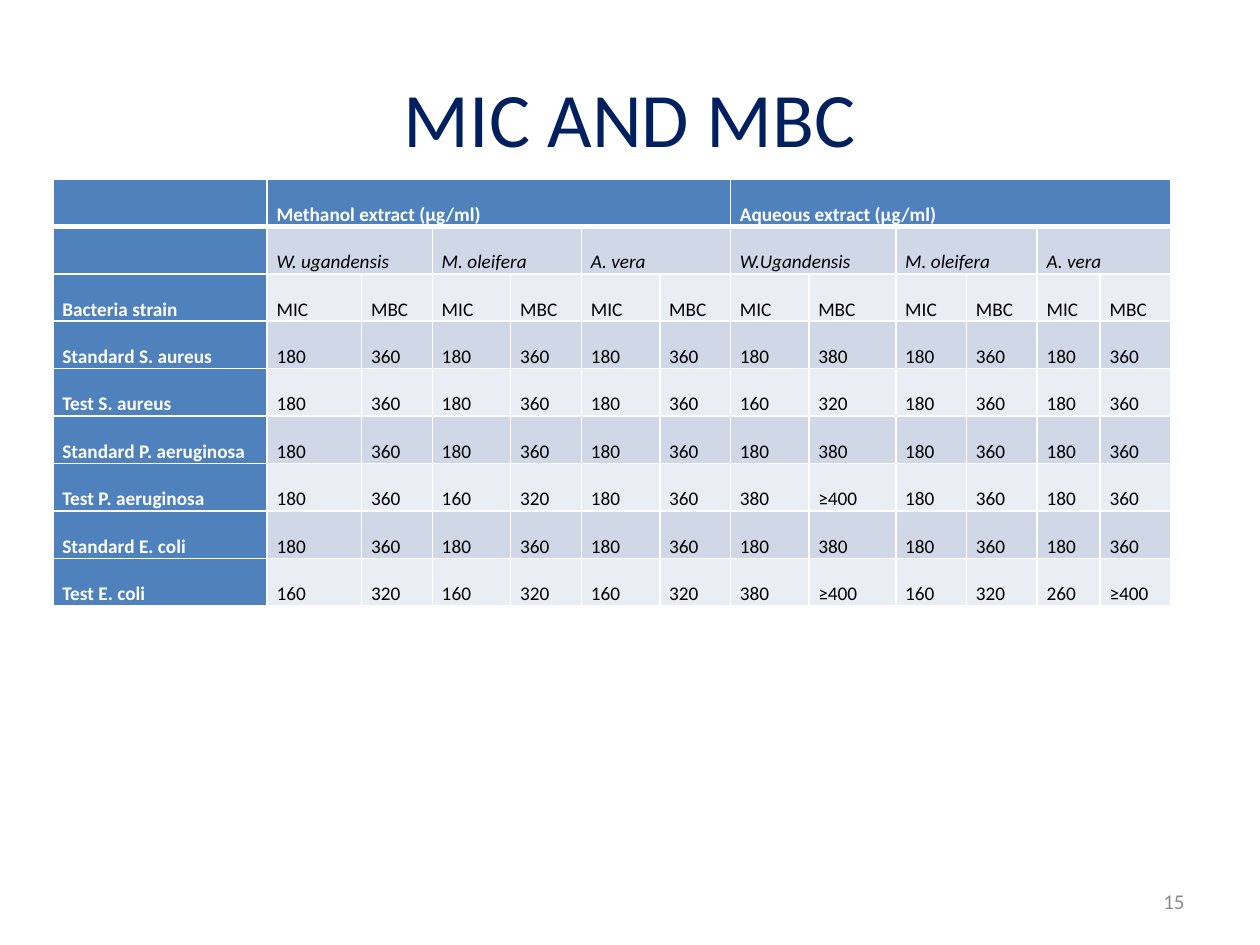
from typing import NamedTuple

from lxml.etree import SubElement
from pptx import Presentation
from pptx.dml.color import RGBColor
from pptx.enum.text import MSO_ANCHOR, PP_ALIGN
from pptx.oxml.ns import qn
from pptx.util import Pt

NAVY = RGBColor(0x00, 0x20, 0x60)
BLUE = RGBColor(0x4F, 0x81, 0xBD)
BAND_DARK = RGBColor(0xD0, 0xD8, 0xE8)
BAND_LIGHT = RGBColor(0xE9, 0xED, 0xF4)
WHITE = RGBColor(0xFF, 0xFF, 0xFF)
BLACK = RGBColor(0x00, 0x00, 0x00)
GRAY = RGBColor(0x8C, 0x8C, 0x8C)

COL_WIDTHS = (122.4, 54, 40.4, 44.8, 40.4, 44.8, 40.4,
              44.8, 49.7, 40.4, 40.4, 36, 40.4)
ROW_HEIGHT = 27.1


class Strain(NamedTuple):
    name: str
    values: str  # MIC and MBC for each plant, methanol first


EXTRACTS = ("Methanol extract (μg/ml)", "Aqueous extract (μg/ml)")
PLANTS = ("W. ugandensis", "M. oleifera", "A. vera",
          "W.Ugandensis", "M. oleifera", "A. vera")
STRAINS = (
    Strain("Standard S. aureus", "180 360 180 360 180 360 180 380 180 360 180 360"),
    Strain("Test S. aureus", "180 360 180 360 180 360 160 320 180 360 180 360"),
    Strain("Standard P. aeruginosa", "180 360 180 360 180 360 180 380 180 360 180 360"),
    Strain("Test P. aeruginosa", "180 360 160 320 180 360 380 ≥400 180 360 180 360"),
    Strain("Standard E. coli", "180 360 180 360 180 360 180 380 180 360 180 360"),
    Strain("Test E. coli", "160 320 160 320 160 320 380 ≥400 160 320 260 ≥400"),
)


def write(tf, text: str, *, size: float, color: RGBColor, bold: bool = False,
          italic: bool = False, align=PP_ALIGN.LEFT, spacing: float = 1) -> None:
    p = tf.paragraphs[0]
    p.alignment = align
    p.line_spacing = spacing
    r = p.add_run()
    r.text = text
    r.font.name = "Calibri"
    r.font.size = Pt(size)
    r.font.bold = bold
    r.font.italic = italic
    r.font.color.rgb = color


def add_text(slide, text: str, left: float, top: float, width: float,
             height: float, **fmt) -> None:
    box = slide.shapes.add_textbox(Pt(left), Pt(top), Pt(width), Pt(height))
    tf = box.text_frame
    tf.word_wrap = True
    tf.vertical_anchor = MSO_ANCHOR.MIDDLE
    write(tf, text, **fmt)


def add_borders(cell, top: float = 1, bottom: float = 1) -> None:
    tc_pr = cell._tc.get_or_add_tcPr()
    for side, width in (("L", 1), ("R", 1), ("T", top), ("B", bottom)):
        ln = SubElement(tc_pr, qn(f"a:ln{side}"), w=str(Pt(width)))
        fill = SubElement(ln, qn("a:solidFill"))
        SubElement(fill, qn("a:srgbClr"), val=str(WHITE))


def style_cell(cell, row: int, col: int) -> None:
    add_borders(cell, top=3 if row == 1 else 1, bottom=3 if row == 0 else 1)
    cell.fill.solid()
    band = BAND_DARK if row % 2 else BAND_LIGHT
    cell.fill.fore_color.rgb = BLUE if row == 0 or col == 0 else band
    cell.margin_left = cell.margin_right = Pt(5.4)
    cell.margin_top = cell.margin_bottom = 0


def spread(labels: tuple[str, ...], span: int) -> list[str]:
    """Row of labels, each at the start of its span, after an empty first cell."""
    row = [""]
    for label in labels:
        row += [label] + [""] * (span - 1)
    return row


def add_results_table(slide) -> None:
    rows = [spread(EXTRACTS, 6), spread(PLANTS, 2),
            ["Bacteria strain"] + ["MIC", "MBC"] * len(PLANTS)]
    rows += [[strain.name, *strain.values.split()] for strain in STRAINS]

    frame = slide.shapes.add_table(
        len(rows), len(COL_WIDTHS), Pt(30.24), Pt(102.24),
        Pt(sum(COL_WIDTHS)), Pt(ROW_HEIGHT * len(rows)))
    table = frame.table
    table.horz_banding = False
    for column, width in zip(table.columns, COL_WIDTHS):
        column.width = Pt(width)
    for i, texts in enumerate(rows):
        table.rows[i].height = Pt(ROW_HEIGHT)
        for j, text in enumerate(texts):
            cell = table.cell(i, j)
            style_cell(cell, i, j)
            header = i == 0 or j == 0
            write(cell.text_frame, text, size=11, spacing=2, bold=header,
                  italic=i == 1 and not header, color=WHITE if header else BLACK)
    for row, span in ((0, 6), (1, 2)):
        for col in range(1, len(COL_WIDTHS), span):
            table.cell(row, col).merge(table.cell(row, col + span - 1))


def main() -> None:
    prs = Presentation()
    prs.slide_width, prs.slide_height = Pt(720), Pt(540)
    s = prs.slides.add_slide(prs.slide_layouts[6])
    add_text(s, "MIC AND MBC", 36, 21.6, 648, 90,
             size=44, color=NAVY, align=PP_ALIGN.CENTER)
    add_results_table(s)
    add_text(s, "15", 516, 500.5, 168, 28.75,
             size=12, color=GRAY, align=PP_ALIGN.RIGHT)
    prs.save("out.pptx")


if __name__ == "__main__":
    main()
